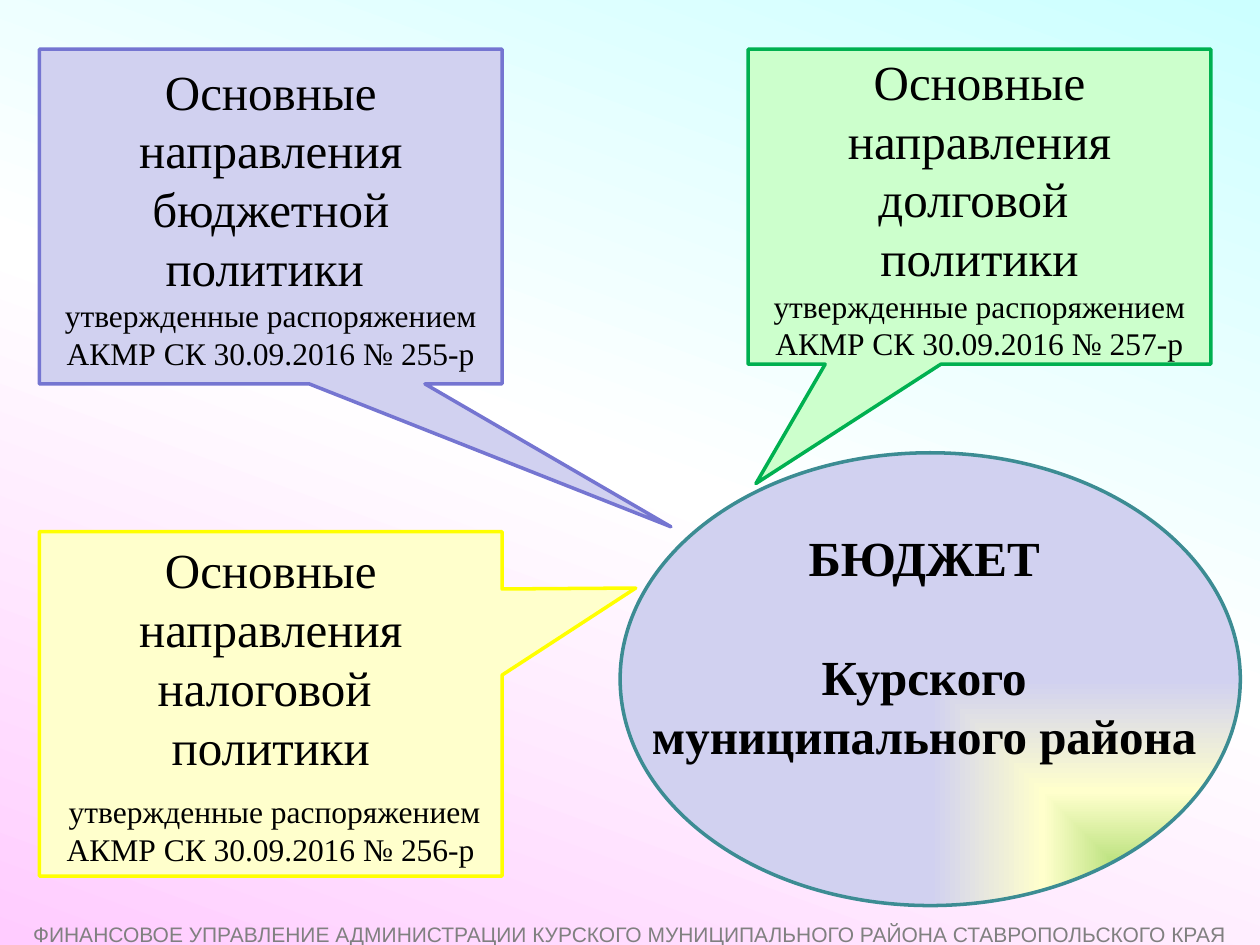
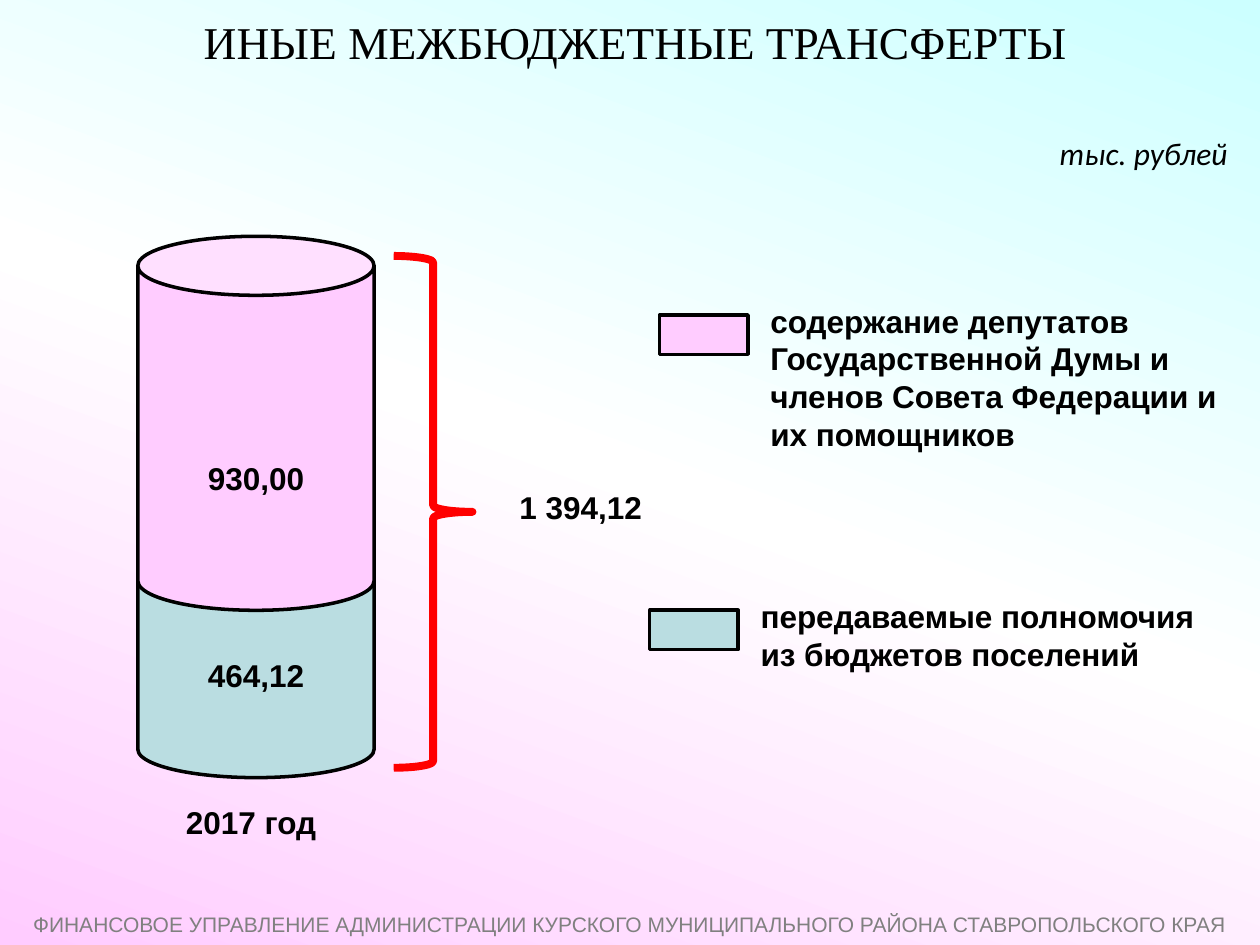
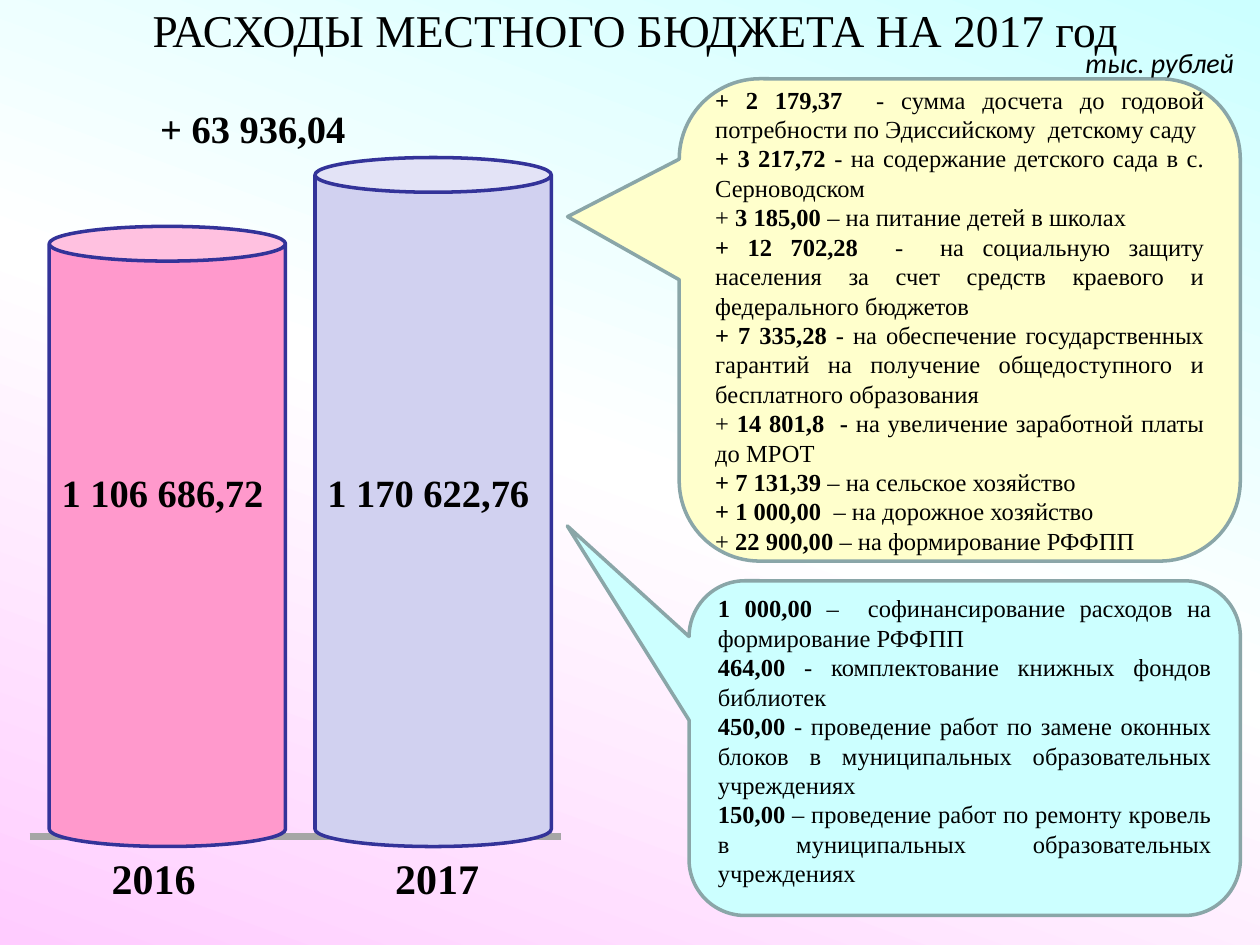
from lxml import etree
from pptx import Presentation
from pptx.dml.color import RGBColor
from pptx.enum.shapes import MSO_CONNECTOR, MSO_SHAPE
from pptx.enum.text import MSO_ANCHOR, MSO_AUTO_SIZE, PP_ALIGN
from pptx.oxml.ns import qn
from pptx.util import Inches, Pt

LEFT, CENTER, JUSTIFY = PP_ALIGN.LEFT, PP_ALIGN.CENTER, PP_ALIGN.JUSTIFY
MIDDLE, TOP = MSO_ANCHOR.MIDDLE, MSO_ANCHOR.TOP
CAN, RECTANGLE, ELLIPSE = MSO_SHAPE.CAN, MSO_SHAPE.RECTANGLE, MSO_SHAPE.OVAL
BRACE = MSO_SHAPE.RIGHT_BRACE
RECT_CALLOUT = MSO_SHAPE.RECTANGULAR_CALLOUT
ROUND_CALLOUT = MSO_SHAPE.ROUNDED_RECTANGULAR_CALLOUT

SLIDE_WIDTH, SLIDE_HEIGHT = Inches(10), Inches(7.5)
COLUMNS = 128
TITLE_ONLY, BLANK = 5, 6
SERIF, SANS, UNIT_FONT = "Times New Roman", "Arial", "Calibri"

BLACK = RGBColor(0x00, 0x00, 0x00)
WHITE = RGBColor(0xFF, 0xFF, 0xFF)
GRAY = RGBColor(0x80, 0x80, 0x80)
AXIS_GRAY = RGBColor(0xA6, 0xA6, 0xA6)
CYAN = RGBColor(0xCC, 0xFF, 0xFF)
PINK = RGBColor(0xFF, 0xCC, 0xFF)
ROSE = RGBColor(0xFF, 0x99, 0xCC)
LILAC = RGBColor(0xD1, 0xD1, 0xF0)
VIOLET = RGBColor(0x75, 0x75, 0xD1)
INDIGO = RGBColor(0x33, 0x33, 0x99)
CREAM = RGBColor(0xFF, 0xFF, 0xCC)
YELLOW = RGBColor(0xFF, 0xFF, 0x00)
MINT = RGBColor(0xCC, 0xFF, 0xCC)
GREEN = RGBColor(0x00, 0xB0, 0x50)
LIME = RGBColor(0x92, 0xD0, 0x50)
TEAL = RGBColor(0x3C, 0x8C, 0x93)
PALE_TEAL = RGBColor(0xBA, 0xDD, 0xE1)
GRAY_TEAL = RGBColor(0x8A, 0xA6, 0xA8)
RED = RGBColor(0xFF, 0x00, 0x00)

FOOTER = ("ФИНАНСОВОЕ УПРАВЛЕНИЕ АДМИНИСТРАЦИИ КУРСКОГО "
          "МУНИЦИПАЛЬНОГО РАЙОНА СТАВРОПОЛЬСКОГО КРАЯ")
UNIT = "тыс. рублей"

INCREASES = [
    ("", "+ 2 179,37  ", "- сумма досчета до годовой потребности по Эдиссийскому  детскому саду"),
    ("", "+ 3 217,72 ", "- на содержание детского сада в с. Серноводском"),
    ("+ ", "3 185,00 ", "– на питание детей в школах"),
    ("", "+ 12 702,28  ", "-  на социальную защиту населения за счет средств "
                          "краевого и федерального бюджетов"),
    ("", "+ 7 335,28 ", "- на обеспечение государственных гарантий на получение "
                        "общедоступного и бесплатного образования"),
    ("+ ", "14 801,8  - ", "на увеличение заработной платы до МРОТ "),
    ("", "+ 7 131,39 ", "– на сельское хозяйство"),
    ("", "+ 1 000,00", "  – на дорожное хозяйство"),
    ("+ ", "22 900,00", " – на формирование РФФПП"),
]
LOCAL_COSTS = [
    ("", "1 000,00 ", "–  софинансирование расходов на формирование РФФПП"),
    ("", "464,00 ", "- комплектование книжных фондов библиотек"),
    ("", "450,00", " - проведение работ по замене оконных блоков "
                   "в муниципальных образовательных учреждениях"),
    ("", "150,00", " – проведение работ по ремонту кровель "
                   "в муниципальных образовательных учреждениях"),
]


def cells(*counts):
    """Turn counts of square grid cells into slide lengths."""
    return [int(SLIDE_WIDTH * count / COLUMNS) for count in counts]


def set_gradient(fill, owner, colors, direction, **attributes):
    """Fill with evenly spaced colours along a line or towards a corner."""
    fill.gradient()
    gradient = next(owner.iter(qn("a:gradFill")))
    gradient.clear()
    gradient.set("rotWithShape", "1")
    stops = etree.SubElement(gradient, qn("a:gsLst"))
    for index, color in enumerate(colors):
        position = str(100000 * index // (len(colors) - 1))
        stop = etree.SubElement(stops, qn("a:gs"), pos=position)
        etree.SubElement(stop, qn("a:srgbClr"), val=str(color))
    course = etree.SubElement(gradient, qn(direction), **attributes)
    if direction == "a:path":
        etree.SubElement(course, qn("a:fillToRect"), l="100000", t="100000")


def style(paragraph, size, font=SERIF, align=CENTER, color=BLACK, bold=False, italic=False):
    """Format a whole paragraph."""
    paragraph.alignment = align
    paragraph.font.size = Pt(size)
    paragraph.font.name = font
    paragraph.font.color.rgb = color
    paragraph.font.bold = bold
    paragraph.font.italic = italic


def add_paragraph(frame, is_first):
    """Give the frame's first paragraph, or a new one."""
    return frame.paragraphs[0] if is_first else frame.add_paragraph()


def add_label(slide, box, lines, size, **look):
    """Place lines of text, one paragraph each."""
    frame = slide.shapes.add_textbox(*cells(*box)).text_frame
    frame.word_wrap = True
    for index, line in enumerate(lines):
        paragraph = add_paragraph(frame, index == 0)
        paragraph.text = line
        style(paragraph, size, **look)
    return frame


def add_figure(slide, kind, box, fill, outline, width=2, adjust=()):
    """Draw an outlined preset shape, filled when a colour is given."""
    figure = slide.shapes.add_shape(kind, *cells(*box))
    figure.shadow.inherit = False
    if fill is None:
        figure.fill.background()
    else:
        figure.fill.solid()
        figure.fill.fore_color.rgb = fill
    figure.line.color.rgb = outline
    figure.line.width = Pt(width)
    for index, value in enumerate(adjust):
        figure.adjustments[index] = value
    return figure


def add_policy(slide, box, fill, outline, tip, heading, order, gap=0):
    """Draw a callout naming a policy and the order that approved it."""
    frame = add_figure(slide, RECT_CALLOUT, box, fill, outline, adjust=tip).text_frame
    frame.vertical_anchor = MIDDLE
    for index, line in enumerate(heading):
        paragraph = add_paragraph(frame, index == 0)
        paragraph.text = line
        style(paragraph, 28)
    approval = frame.add_paragraph()
    approval.text = order
    approval.space_before = Pt(gap)
    style(approval, 18)


def add_cost_list(slide, box, fill, tip, costs):
    """Draw a rounded callout listing costs with bold amounts."""
    frame = add_figure(slide, ROUND_CALLOUT, box, fill, GRAY_TEAL, adjust=tip).text_frame
    frame.vertical_anchor = MIDDLE
    for index, (sign, amount, purpose) in enumerate(costs):
        paragraph = add_paragraph(frame, index == 0)
        style(paragraph, 14, align=JUSTIFY)
        for text, bold in ((sign, False), (amount, True), (purpose, False)):
            if text:
                run = paragraph.add_run()
                run.text = text
                run.font.bold = bold
    return frame


def add_legend(slide, left, top, color, meaning):
    """Draw a colour swatch with its meaning beside it."""
    add_figure(slide, RECTANGLE, (left, top, 9, 4), color, BLACK)
    add_label(slide, (left + 10, top - 2, 48, 17), [meaning], 18,
              font=SANS, align=LEFT, bold=True)


def add_axis(slide, start, end, row):
    """Draw the base line under the columns."""
    axis = slide.shapes.add_connector(MSO_CONNECTOR.STRAIGHT, *cells(start, row, end, row))
    axis.line.color.rgb = AXIS_GRAY
    axis.line.width = Pt(4.25)
    etree.SubElement(axis.element.spPr, qn("a:effectLst"))


def add_unit(slide, left, top, size):
    """Name the unit of measure."""
    add_label(slide, (left, top, 21.6, 5), [UNIT], size,
              font=UNIT_FONT, align=LEFT, italic=True)


def add_footer(slide, top):
    """Write the department's name at the foot."""
    add_label(slide, (0, top, COLUMNS, 3.8), [FOOTER], 12, font=SANS, color=GRAY)


def set_title(slide, text, height):
    """Place and format the slide's title."""
    title = slide.shapes.title
    title.left, title.top, title.width, title.height = cells(0, 0, COLUMNS, height)
    frame = title.text_frame
    frame.text = text
    frame.auto_size = MSO_AUTO_SIZE.NONE
    frame.vertical_anchor = MIDDLE
    style(frame.paragraphs[0], 26)


def build_policies(slide):
    """Show the three policies behind the budget."""
    budget = add_figure(slide, ELLIPSE, (63, 46, 63, 46), LILAC, TEAL)
    set_gradient(budget.fill, budget.element, (LIME, CREAM, LILAC), "a:path", path="rect")
    order = "утвержденные распоряжением АКМР СК 30.09.2016 № "
    add_policy(slide, (4, 5, 47, 34), LILAC, VIOLET, (0.865, 0.927),
               ["Основные направления бюджетной политики "], order + "255-р")
    add_policy(slide, (76, 5, 47, 32), MINT, GREEN, (-0.483, 0.879),
               ["Основные направления долговой ", "политики"], order + "257-р")
    add_policy(slide, (4, 54, 47, 35), CREAM, YELLOW, (0.789, -0.336),
               ["Основные направления налоговой ", "политики"], " " + order + "256-р", gap=10)
    name = add_label(slide, (63, 53, 63, 25.5),
                     ["БЮДЖЕТ ", "Курского ", "муниципального района "], 28, bold=True)
    name.paragraphs[1].space_before = Pt(34)
    add_footer(slide, 93)


def build_transfers(slide):
    """Show the parts of the other transfers."""
    set_title(slide, " ИНЫЕ МЕЖБЮДЖЕТНЫЕ ТРАНСФЕРТЫ", 8.3)
    add_footer(slide, 92)
    add_legend(slide, 67, 32, PINK, "содержание депутатов Государственной Думы "
                                    "и членов Совета Федерации и их помощников")
    add_legend(slide, 66, 62, PALE_TEAL, "передаваемые полномочия из бюджетов поселений")
    add_figure(slide, CAN, (14, 56, 24, 23), PALE_TEAL, BLACK)
    add_figure(slide, CAN, (14, 24, 24, 38), PINK, BLACK)
    add_figure(slide, BRACE, (40, 26, 8, 52), None, RED, width=4.5)
    for left, top, width, text in ((14, 46, 24, "930,00"), (14, 66, 24, "464,12"),
                                   (50, 49, 18, "1 394,12"), (13, 81, 25, "2017 год")):
        add_label(slide, (left, top, width, 5), [text], 18, font=SANS, bold=True)
    add_unit(slide, 106.4, 13, 18)


def build_expenses(slide):
    """Compare the expenses of two years and explain the growth."""
    set_title(slide, " РАСХОДЫ МЕСТНОГО БЮДЖЕТА НА 2017 год", 6)
    add_axis(slide, 3, 57, 85)
    base = 86
    for left, top, color, total, year, year_left in (
            (5, 23, ROSE, "1 106 686,72", "2016", 3.6),
            (32, 16, LILAC, "1 170 622,76", "2017", 32.4)):
        add_figure(slide, CAN, (left, top, 24, base - top), color, INDIGO, adjust=(0.147,))
        add_label(slide, (left, 47, 24, 6), [total], 22, align=LEFT, bold=True)
        add_label(slide, (year_left, base, 24, 6.4), [year], 24, bold=True)
    add_cost_list(slide, (69, 8, 57, 49), CREAM, (-0.699, -0.214, 0.167), INCREASES)
    add_label(slide, (15, 10, 24, 6), ["+ 63 936,04"], 22, align=LEFT, bold=True)
    add_unit(slide, 109, 4, 16)
    local = add_cost_list(slide, (70, 59, 56, 34), CYAN, (-0.721, -0.664, 0.167), LOCAL_COSTS)
    local.margin_bottom = Inches(0.17)


def main():
    """Build and save the presentation."""
    deck = Presentation()
    deck.slide_width, deck.slide_height = SLIDE_WIDTH, SLIDE_HEIGHT
    master = deck.slide_master
    set_gradient(master.background.fill, master.element, (CYAN, WHITE, PINK),
                 "a:lin", ang="6600000", scaled="0")
    for layout, build in ((BLANK, build_policies), (TITLE_ONLY, build_transfers),
                          (TITLE_ONLY, build_expenses)):
        build(deck.slides.add_slide(deck.slide_layouts[layout]))
    deck.save("out.pptx")


if __name__ == "__main__":
    main()
